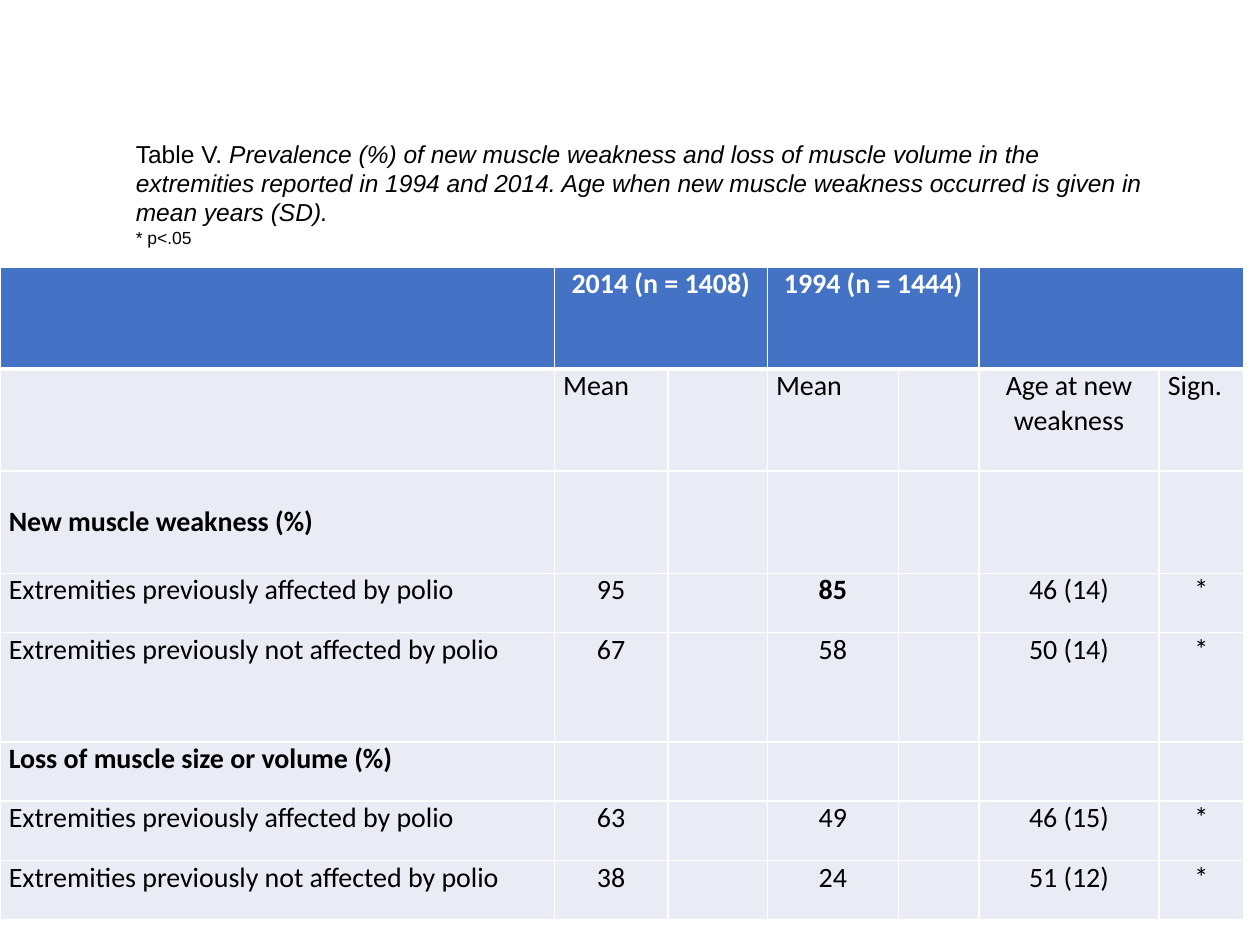
import pptx
import pptx.dml.color
import pptx.enum.text
import pptx.oxml.ns
import pptx.util
from lxml import etree

Inches = pptx.util.Inches
Pt = pptx.util.Pt
LEFT = pptx.enum.text.PP_ALIGN.LEFT
CENTER = pptx.enum.text.PP_ALIGN.CENTER

COLORS = {"header": "4472C4", "body": "E9EBF5", "rule": "FFFFFF",
          "header_text": "FFFFFF", "text": "000000"}

COLUMN_WIDTHS = [4.4, 0.9, 0.79, 1.04, 0.64, 1.43, 0.67]
ROW_HEIGHTS = [0.81, 0.81, 0.81, 0.47, 0.87, 0.47, 0.47, 0.47]
HEADER_SPANS = [(1, 2), (3, 4), (5, 6)]
AFFECTED = "Extremities previously affected by polio"
NOT_AFFECTED = "Extremities previously not affected by polio"
ROWS = [
    ["", "2014 (n = 1408)", "", "1994 (n = 1444)", "", "", ""],
    ["", "Mean", "", "Mean", "", "Age at new\nweakness", "Sign."],
    ["New muscle weakness (%)"] + [""] * 6,
    [AFFECTED, "95", "", "85", "", "46 (14)", "*"],
    [NOT_AFFECTED, "67", "", "58", "", "50 (14)", "*"],
    ["Loss of muscle size or volume (%)"] + [""] * 6,
    [AFFECTED, "63", "", "49", "", "46 (15)", "*"],
    [NOT_AFFECTED, "38", "", "24", "", "51 (12)", "*"],
]
SECTION_ROWS = (2, 5)
BOLD_VALUE = (3, 3)


def rgb(name):
    return pptx.dml.color.RGBColor.from_string(COLORS[name])


def add_text(paragraph, text, *, font="Calibri", size=16, color="text",
             bold=False, italic=False, align=LEFT):
    paragraph.alignment = align
    run = paragraph.add_run()
    run.text = text
    run.font.name = font
    run.font.size = Pt(size)
    run.font.bold = bold
    run.font.italic = italic
    run.font.color.rgb = rgb(color)


def set_borders(cell, top=1, bottom=1):
    properties = cell._tc.get_or_add_tcPr()
    for side, width in (("L", 1), ("R", 1), ("T", top), ("B", bottom)):
        line = etree.SubElement(properties, pptx.oxml.ns.qn(f"a:ln{side}"), w=str(Pt(width)))
        fill = etree.SubElement(line, pptx.oxml.ns.qn("a:solidFill"))
        etree.SubElement(fill, pptx.oxml.ns.qn("a:srgbClr"), val=COLORS["rule"])


def cell_alignment(row, column):
    if column == 0 or (row == 1 and column != 5):
        return LEFT
    return CENTER


def add_caption(slide, left, top, width, height):
    caption = slide.shapes.add_textbox(Inches(left), Inches(top), Inches(width), Inches(height))
    frame = caption.text_frame
    frame.word_wrap = True
    frame.margin_top = Inches(0.07)
    title = frame.paragraphs[0]
    add_text(title, "Table V. ", font="Arial", size=14)
    add_text(title, "Prevalence (%) of new muscle weakness and loss of muscle volume in the "
             "extremities reported in 1994 and 2014. Age when new muscle weakness occurred "
             "is given in mean years (SD).", font="Arial", size=14, italic=True)
    add_text(frame.add_paragraph(), "* p<.05", font="Arial", size=10)


def add_prevalence_table(slide, left, top, width, height):
    table = slide.shapes.add_table(len(ROWS), len(COLUMN_WIDTHS), Inches(left), Inches(top),
                                   Inches(width), Inches(height)).table
    for column, column_width in zip(table.columns, COLUMN_WIDTHS):
        column.width = Inches(column_width)
    for row, row_height in zip(table.rows, ROW_HEIGHTS):
        row.height = Inches(row_height)

    # Cells, with a heavier rule below the header
    for r, texts in enumerate(ROWS):
        header = r == 0
        for c, text in enumerate(texts):
            cell = table.cell(r, c)
            set_borders(cell, top=3 if r == 1 else 1, bottom=3 if header else 1)
            cell.fill.solid()
            cell.fill.fore_color.rgb = rgb("header" if header else "body")
            cell.margin_left = cell.margin_right = Inches(0.07)
            cell.margin_top = cell.margin_bottom = 0
            if not text:
                continue
            frame = cell.text_frame
            for i, line in enumerate(text.split("\n")):
                paragraph = frame.add_paragraph() if i else frame.paragraphs[0]
                add_text(paragraph, line, color="header_text" if header else "text",
                         bold=header or r in SECTION_ROWS or (r, c) == BOLD_VALUE,
                         align=cell_alignment(r, c))

    # The first section heading sits one line lower
    table.cell(SECTION_ROWS[0], 0).margin_top = Inches(0.27)
    for first, last in HEADER_SPANS:
        table.cell(0, first).merge(table.cell(0, last))


def main():
    presentation = pptx.Presentation()
    presentation.slide_width = Inches(10)
    presentation.slide_height = Inches(7.5)
    slide = presentation.slides.add_slide(presentation.slide_layouts[6])
    add_prevalence_table(slide, 0, 2.12, sum(COLUMN_WIDTHS), sum(ROW_HEIGHTS))
    add_caption(slide, 0.98, 1.03, 8.33, 1.28)
    presentation.save("out.pptx")


if __name__ == "__main__":
    main()
